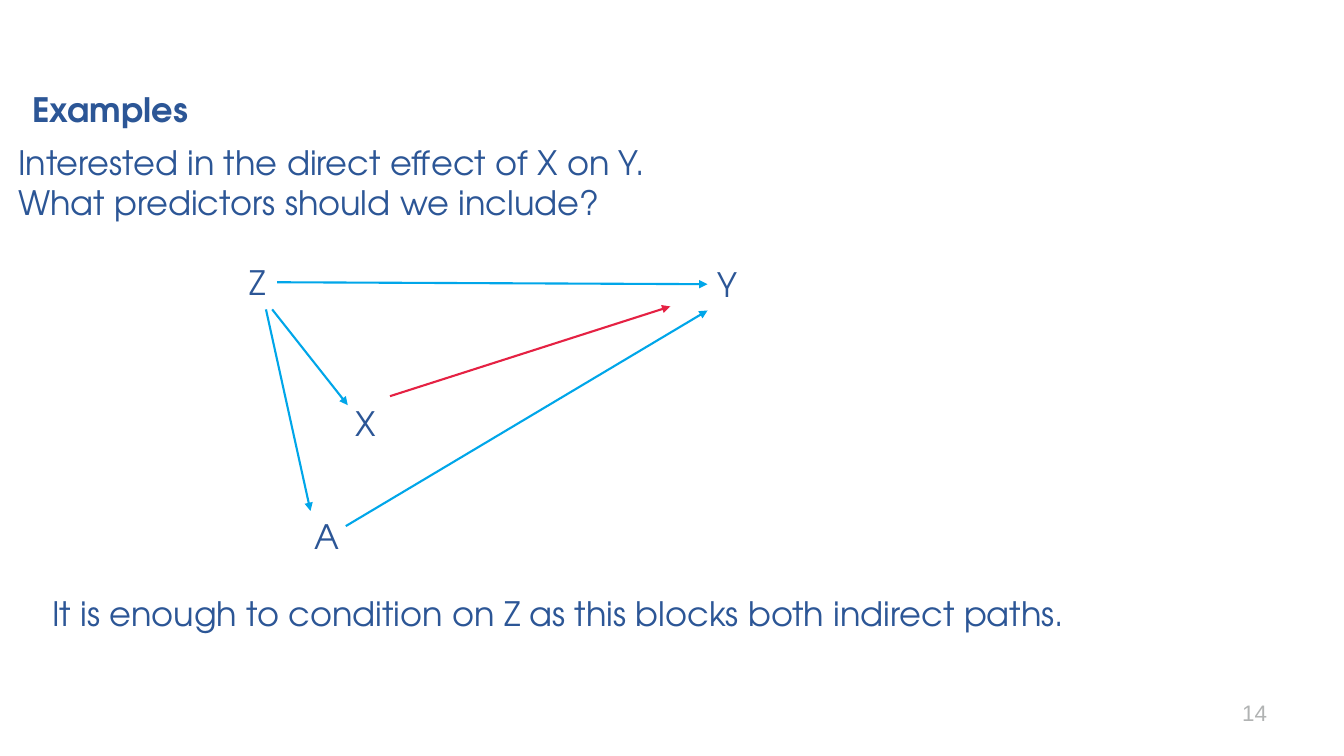
from lxml.etree import SubElement
from pptx import Presentation
from pptx.dml.color import RGBColor
from pptx.enum.shapes import MSO_CONNECTOR
from pptx.enum.text import MSO_ANCHOR, MSO_AUTO_SIZE, PP_ALIGN
from pptx.oxml.ns import qn
from pptx.util import Pt

COLORS = {"text": "2C5696", "indirect": "00A6E9", "direct": "E52143", "number": "B1B3B3"}
BODY_FONT = "TeX Gyre Adventor"

NODES = [
    ("Z", (171.4, 183.6, 60.5, 36)),
    ("X", (247, 284.4, 167, 36)),
    ("Y", (505.4, 185, 41.8, 36)),
    ("A", (217.4, 365, 28.8, 36)),
]
ARROWS = [
    ((198, 201.6), (505.4, 203), "indirect"),
    ((194.4, 221), (248.4, 289.4), "indirect"),
    ((190, 221), (221.8, 365), "indirect"),
    ((247, 375.8), (505.4, 221.8), "indirect"),
    ((278.6, 283), (478.8, 218.9), "direct"),
]


def fill_text(shape, lines, size=24, font=BODY_FONT, color="text", bold=False,
              align=PP_ALIGN.LEFT, anchor=MSO_ANCHOR.TOP):
    frame = shape.text_frame
    frame.word_wrap = True
    frame.auto_size = MSO_AUTO_SIZE.NONE
    frame.vertical_anchor = anchor
    frame.text = "\n".join(lines)
    for para in frame.paragraphs:
        para.alignment = align
        para.font.size = Pt(size)
        para.font.name = font
        para.font.bold = bold
        para.font.color.rgb = RGBColor.from_string(COLORS[color])


def add_text(page, area, lines, **style):
    box = page.shapes.add_textbox(*map(Pt, area))
    fill_text(box, lines, **style)


def add_title(page, area, text):
    title = page.shapes.title
    title.left, title.top, title.width, title.height = map(Pt, area)
    fill_text(title, [text], bold=True)


def add_arrow(page, start, end, color):
    arrow = page.shapes.add_connector(MSO_CONNECTOR.STRAIGHT, *map(Pt, start + end))
    arrow.line.color.rgb = RGBColor.from_string(COLORS[color])
    arrow.line.width = Pt(1.5)
    properties = arrow.line._get_or_add_ln()
    SubElement(properties, qn("a:tailEnd"), type="triangle")
    SubElement(arrow._element.spPr, qn("a:effectLst"))


def main():
    deck = Presentation()
    deck.slide_width, deck.slide_height = Pt(960), Pt(540)
    page = deck.slides.add_slide(deck.slide_layouts[5])

    add_title(page, (15.8, 59.8, 434.9, 36), "Examples")
    add_text(page, (5.8, 97.9, 887.8, 65.5), [
        "Interested in the direct effect of X on Y.",
        "What predictors should we include?",
    ])
    for name, area in NODES:
        add_text(page, area, [name])
    for start, end, color in ARROWS:
        add_arrow(page, start, end, color)
    add_text(page, (30.2, 419.8, 797.8, 65.5),
             ["It is enough to condition on Z as this blocks both indirect paths."])
    add_text(page, (804.2, 494.6, 108, 28.8), ["14"], size=16, font="Arial",
             color="number", align=PP_ALIGN.RIGHT, anchor=MSO_ANCHOR.MIDDLE)

    deck.save("out.pptx")


if __name__ == "__main__":
    main()
